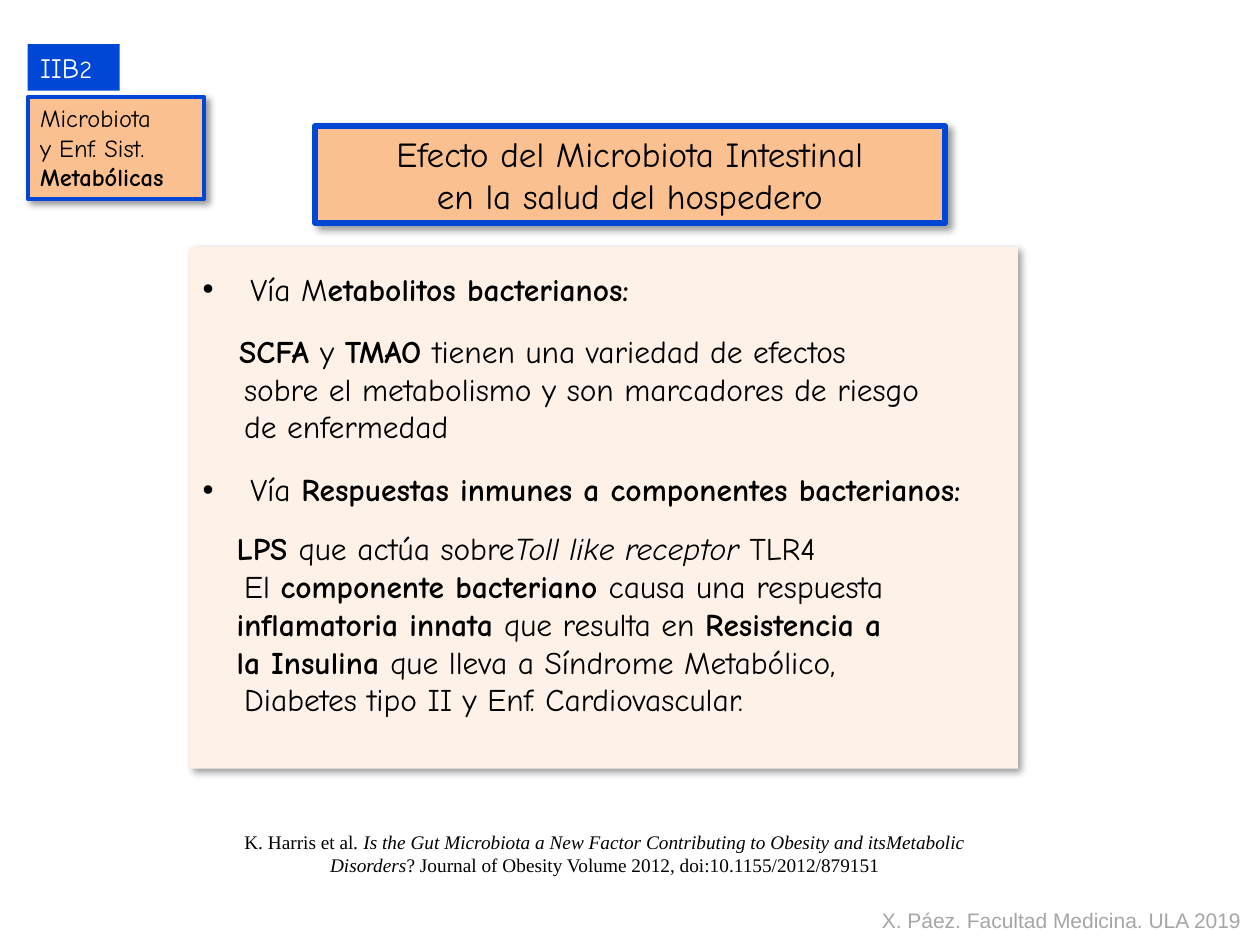
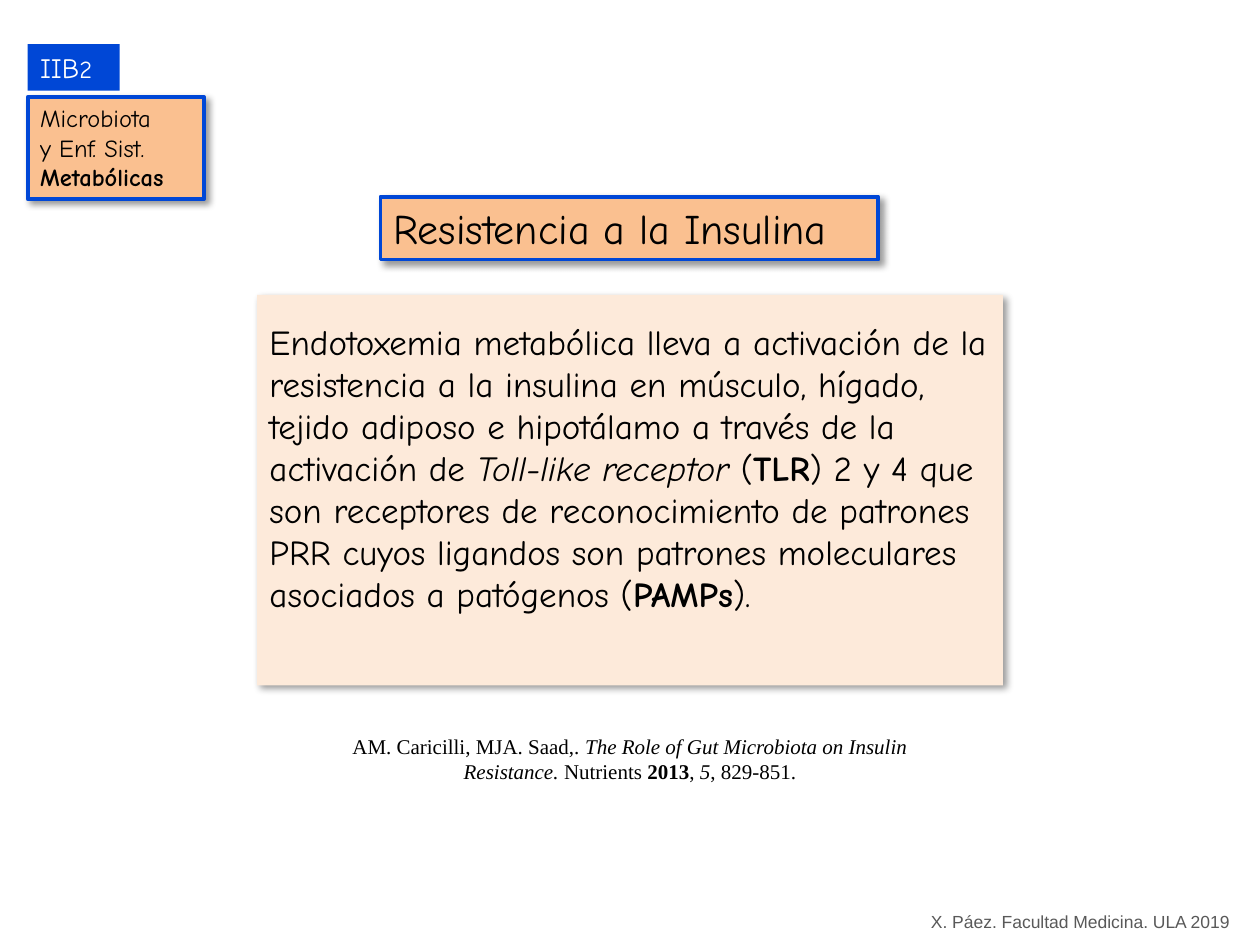
from dataclasses import dataclass
from typing import NamedTuple, Optional

from lxml.etree import SubElement
from pptx import Presentation
from pptx.dml.color import RGBColor
from pptx.enum.shapes import MSO_SHAPE as Preset
from pptx.enum.text import MSO_ANCHOR as Anchor, MSO_AUTO_SIZE as AutoSize, PP_ALIGN as Align
from pptx.oxml.ns import qn
from pptx.util import Emu, Inches, Pt

COLUMNS, ROWS = 100, 75
SLIDE_WIDTH, SLIDE_HEIGHT = Inches(10), Inches(7.5)
TITLE_ONLY = 5


@dataclass(frozen=True)
class Theme:
    ink: str = "000000"
    white: str = "FFFFFF"
    blue: str = "0047D6"
    orange: str = "FAC090"
    cream: str = "FEF2E8"
    peach: str = "FDEADA"
    light_gray: str = "A6A6A6"
    dark_gray: str = "595959"
    hand: str = "Comic Neue"
    serif: str = "Times New Roman"
    sans: str = "Arial"
    heading: float = 24
    large: float = 20
    body: float = 18
    code: float = 16
    tag: float = 14
    reference: float = 12
    reference_small: float = 11
    credit_small: float = 10


THEME = Theme()


class Area(NamedTuple):
    """Left, top, width and height in grid columns and rows."""
    left: float
    top: float
    width: float
    height: float

    def emu(self) -> tuple[Emu, Emu, Emu, Emu]:
        column, row = SLIDE_WIDTH / COLUMNS, SLIDE_HEIGHT / ROWS
        return (Emu(round(self.left * column)), Emu(round(self.top * row)),
                Emu(round(self.width * column)), Emu(round(self.height * row)))


class Words(NamedTuple):
    text: str
    bold: bool = False
    italic: bool = False
    size: Optional[float] = None


@dataclass(frozen=True)
class Line:
    words: tuple[Words, ...]
    indent: float = 0
    before: float = 0
    bullet: str = ""


@dataclass(frozen=True)
class Panel:
    area: Area
    lines: tuple[Line, ...]
    size: float
    font: str = THEME.hand
    ink: str = THEME.ink
    fill: Optional[str] = None
    border: float = 0
    shadow: bool = False
    align: Align = Align.LEFT
    top_inset: float = 0.05
    wrap: bool = True


def plain(text: str) -> Words:
    return Words(text)


def bold(text: str) -> Words:
    return Words(text, bold=True)


def italic(text: str) -> Words:
    return Words(text, italic=True)


def line(*words: Words, indent: float = 0, before: float = 0, bullet: str = "") -> Line:
    return Line(words, indent, before, bullet)


def cast_shadow(shape) -> None:
    effects = shape._element.spPr.find(qn("a:effectLst"))
    outer = SubElement(effects, qn("a:outerShdw"), blurRad=str(Pt(4)), dist=str(Pt(3)),
                       dir=str(45 * 60000), algn="tl", rotWithShape="0")
    color = SubElement(outer, qn("a:srgbClr"), val=THEME.ink)
    SubElement(color, qn("a:alpha"), val="40000")


def indent_paragraph(paragraph, content: Line) -> None:
    properties = paragraph._p.get_or_add_pPr()
    margin = Inches(content.indent)
    properties.set("marL", str(margin))
    properties.set("indent", str(-margin if content.bullet else 0))
    if content.bullet:
        SubElement(properties, qn("a:buFont"), typeface=THEME.sans)
        SubElement(properties, qn("a:buChar"), char=content.bullet)


def write(frame, panel: Panel) -> None:
    frame.auto_size = AutoSize.NONE
    frame.word_wrap = panel.wrap
    frame.vertical_anchor = Anchor.TOP
    frame.margin_left = frame.margin_right = Inches(0.1)
    frame.margin_top, frame.margin_bottom = Inches(panel.top_inset), Inches(0.05)
    for index, content in enumerate(panel.lines):
        paragraph = frame.add_paragraph() if index else frame.paragraphs[0]
        paragraph.alignment = panel.align
        paragraph.space_before = Pt(content.before)
        indent_paragraph(paragraph, content)
        for words in content.words:
            run = paragraph.add_run()
            run.text = words.text
            run.font.name = panel.font
            run.font.size = Pt(words.size or panel.size)
            run.font.bold, run.font.italic = words.bold, words.italic
            run.font.color.rgb = RGBColor.from_string(panel.ink)


def dress(shape, panel: Panel) -> None:
    """Apply the panel's fill, border, shadow and text."""
    if panel.fill:
        shape.fill.solid()
        shape.fill.fore_color.rgb = RGBColor.from_string(panel.fill)
    if panel.border:
        shape.line.color.rgb = RGBColor.from_string(THEME.blue)
        shape.line.width = Pt(panel.border)
    else:
        shape.line.fill.background()
    shape.shadow.inherit = False
    if panel.shadow:
        cast_shadow(shape)
    write(shape.text_frame, panel)


def draw_panel(slide, panel: Panel) -> None:
    if panel.fill:
        shape = slide.shapes.add_shape(Preset.RECTANGLE, *panel.area.emu())
    else:
        shape = slide.shapes.add_textbox(*panel.area.emu())
    dress(shape, panel)


def draw_title(slide, panel: Panel) -> None:
    title = slide.shapes.title
    title.left, title.top, title.width, title.height = panel.area.emu()
    dress(title, panel)


def heading(area: Area, size: float, border: float, align: Align, *texts: str) -> Panel:
    return Panel(area, tuple(line(plain(text)) for text in texts), size,
                 fill=THEME.orange, border=border, shadow=True, align=align)


def reference(area: Area, size: float, *words: Words) -> Panel:
    return Panel(area, (line(*words),), size, THEME.serif, align=Align.CENTER)


def credit(area: Area, size: float, ink: str) -> Panel:
    return Panel(area, (line(plain("X. Páez. Facultad Medicina. ULA 2019")),),
                 size, THEME.sans, ink, wrap=False)


SECTION_TAGS = (
    Panel(Area(2.2, 3.5, 7.3, 3.7), (line(plain("IIB"), Words("2", size=THEME.tag)),),
          THEME.code, ink=THEME.white, fill=THEME.blue, wrap=False),
    Panel(Area(2.2, 7.7, 14, 8.1),
          (line(plain("Microbiota")), line(plain("y Enf. Sist.")), line(bold("Metabólicas"))),
          THEME.tag, fill=THEME.orange, border=2.25, shadow=True),
)

BULLET_INDENT, BOLD_INDENT, PLAIN_INDENT = 0.38, 0.27, 0.33

HOST_EFFECTS = (
    line(plain("Vía M"), bold("etabolitos bacterianos:"), indent=BULLET_INDENT, bullet="•"),
    line(bold("SCFA "), plain("y "), bold("TMAO "), plain("tienen una variedad de efectos"),
         indent=0.29, before=14),
    line(plain("sobre el metabolismo y son marcadores de riesgo"), indent=PLAIN_INDENT),
    line(plain("de enfermedad"), indent=PLAIN_INDENT),
    line(plain("Vía "), bold("Respuestas inmunes a componentes bacterianos:"),
         indent=BULLET_INDENT, before=14.4, bullet="•"),
    line(bold("LPS "), plain("que actúa sobre"), italic("Toll like receptor "), plain("TLR4"),
         indent=BOLD_INDENT, before=12),
    line(plain("El "), bold("componente bacteriano "), plain("causa una respuesta"),
         indent=PLAIN_INDENT),
    line(bold("inflamatoria innata "), plain("que resulta en "), bold("Resistencia a"),
         indent=BOLD_INDENT),
    line(bold("la Insulina "), plain("que lleva a Síndrome Metabólico,"), indent=BOLD_INDENT),
    line(plain("Diabetes tipo II y Enf. Cardiovascular."), indent=PLAIN_INDENT),
)

INSULIN_RESISTANCE = line(
    plain("Endotoxemia metabólica lleva a activación de la resistencia a la insulina en "
          "músculo, hígado, tejido adiposo e hipotálamo a través de la activación de "),
    italic("Toll-like receptor "), plain("("), bold("TLR"),
    plain(") 2 y 4 que son receptores de reconocimiento de patrones PRR cuyos ligandos "
          "son patrones moleculares asociados a patógenos ("),
    bold("PAMPs"), plain(")."),
)


@dataclass(frozen=True)
class Page:
    title: Panel
    panels: tuple[Panel, ...]


PAGES = (
    Page(
        heading(Area(25, 10, 50, 7.7), THEME.large, 3, Align.CENTER,
                "Efecto del Microbiota Intestinal", "en la salud del hospedero"),
        (
            Panel(Area(15.1, 19.6, 65.7, 41.4), HOST_EFFECTS, THEME.body,
                  fill=THEME.cream, shadow=True, top_inset=0.18),
            reference(Area(17.1, 65.4, 61.8, 4.7), THEME.reference_small,
                      plain("K. Harris et al"),
                      italic(". Is the Gut Microbiota a New Factor Contributing to Obesity "
                             "and itsMetabolic Disorders"),
                      plain("? Journal of Obesity Volume 2012, doi:10.1155/2012/879151")),
            credit(Area(69, 71.5, 30.8, 3), THEME.reference, THEME.light_gray),
        ),
    ),
    Page(
        heading(Area(30.2, 15.6, 39.5, 5), THEME.heading, 2.25, Align.LEFT,
                "Resistencia a la Insulina"),
        (
            Panel(Area(20.4, 23.4, 59.2, 31), (INSULIN_RESISTANCE,), THEME.large,
                  fill=THEME.peach, shadow=True, top_inset=0.2),
            reference(Area(25, 57.7, 50, 5), THEME.reference,
                      plain("AM. Caricilli, MJA. Saad,. "),
                      italic("The Role of Gut Microbiota on Insulin Resistance. "),
                      plain("Nutrients "), bold("2013"), plain(", "), italic("5"),
                      plain(", 829-851.")),
            credit(Area(72.9, 71.8, 25.9, 2.7), THEME.credit_small, THEME.dark_gray),
        ),
    ),
)


def main() -> None:
    deck = Presentation()
    deck.slide_width, deck.slide_height = SLIDE_WIDTH, SLIDE_HEIGHT
    for page in PAGES:
        slide = deck.slides.add_slide(deck.slide_layouts[TITLE_ONLY])
        draw_title(slide, page.title)
        for panel in page.panels + SECTION_TAGS:
            draw_panel(slide, panel)
    deck.save("out.pptx")


if __name__ == "__main__":
    main()
